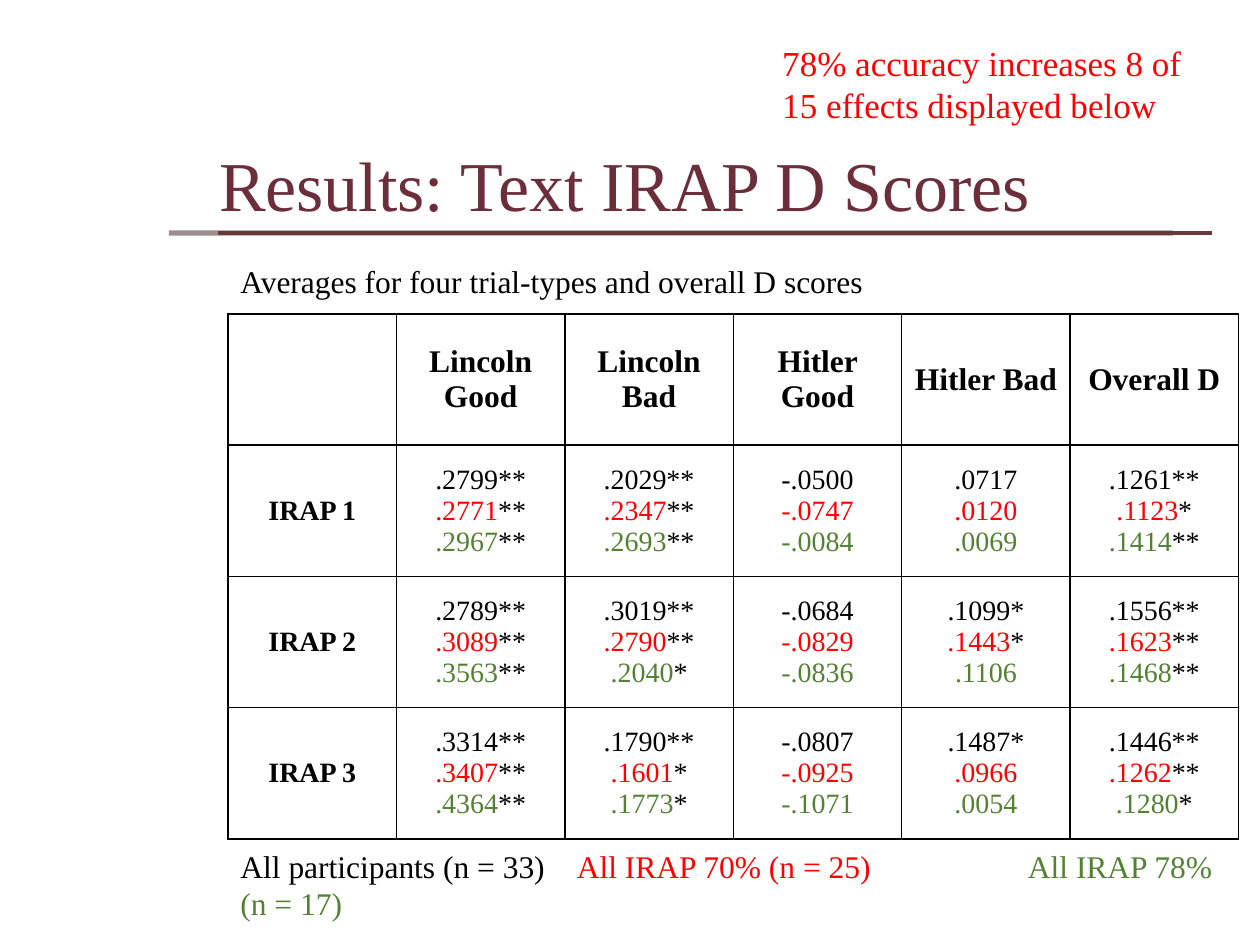
from dataclasses import dataclass

from lxml.etree import SubElement
from pptx import Presentation
from pptx.dml.color import RGBColor
from pptx.enum.shapes import MSO_CONNECTOR
from pptx.enum.text import MSO_ANCHOR, PP_ALIGN
from pptx.oxml.ns import qn
from pptx.util import Inches, Pt

FONT = "Times New Roman"
BLACK, RED, GREEN = "000000", "FF0000", "548235"
TITLE, RULE, RULE_SHADE = "6B2E3A", "683A3C", "3C1C21"
# The slide is a grid of 100 columns by 100 rows
COLUMN, ROW = Inches(10) / 100, Inches(7.5) / 100

HEADINGS = ["Lincoln Good", "Lincoln Bad", "Hitler Good", "Hitler Bad", "Overall D"]
# Each score lists all participants, the 70% group and the 78% group
SCORES = {
    "IRAP 1": [".2799** .2771** .2967**", ".2029** .2347** .2693**", "-.0500 -.0747 -.0084",
               ".0717 .0120 .0069", ".1261** .1123* .1414**"],
    "IRAP 2": [".2789** .3089** .3563**", ".3019** .2790** .2040*", "-.0684 -.0829 -.0836",
               ".1099* .1443* .1106", ".1556** .1623** .1468**"],
    "IRAP 3": [".3314** .3407** .4364**", ".1790** .1601* .1773*", "-.0807 -.0925 -.1071",
               ".1487* .0966 .0054", ".1446** .1262** .1280*"],
}


@dataclass
class Box:
    left: float
    top: float
    width: float
    height: float

    def inner(self, left, top, width, height):
        return Box(self.left + left, self.top + top, width, height)

    def lengths(self):
        return (round(self.left * COLUMN), round(self.top * ROW),
                round(self.width * COLUMN), round(self.height * ROW))


def color(value):
    return RGBColor.from_string(value)


def add_run(paragraph, text, size, shade=BLACK, bold=False):
    run = paragraph.add_run()
    run.text = text
    run.font.name, run.font.size, run.font.bold = FONT, Pt(size), bold
    run.font.color.rgb = color(shade)


def add_text(slide, box, runs, size, anchor=MSO_ANCHOR.TOP):
    frame = slide.shapes.add_textbox(*box.lengths()).text_frame
    frame.word_wrap = True
    frame.vertical_anchor = anchor
    paragraph = frame.paragraphs[0]
    for text, shade in runs:
        add_run(paragraph, text, size, shade)
    return paragraph


def add_rule(slide, box, shade, width, opacity=100):
    left, top, length, _ = box.lengths()
    rule = slide.shapes.add_connector(MSO_CONNECTOR.STRAIGHT, left, top, left + length, top)
    rule.line.width = Pt(width)
    rule.line.color.rgb = color(shade)
    properties = rule._element.spPr
    if opacity < 100:
        line_color = properties.find(f".//{qn('a:srgbClr')}")
        SubElement(line_color, qn("a:alpha"), val=str(opacity * 1000))
    SubElement(properties, qn("a:effectLst"))


def draw_header(slide, box):
    # Double rule under the title
    add_rule(slide, box.inner(0, box.height, 79.7, 0), RULE_SHADE, 3, opacity=50)
    add_rule(slide, box.inner(3.9, box.height, 78.9, 0), RULE, 2.5)
    # Title and remark
    title = add_text(slide, box.inner(3, 1.6, 76.7, box.height - 1.6),
                     [("Results: Text IRAP D Scores", TITLE)], 40, MSO_ANCHOR.BOTTOM)
    title.line_spacing = 0.9
    add_text(slide, box.inner(47.7, 0, 37.1, 10.27),
             [("78% accuracy increases 8 of 15 effects displayed below", RED)], 20)


def style_cell(cell):
    cell.vertical_anchor = MSO_ANCHOR.MIDDLE
    properties = cell._tc.get_or_add_tcPr()
    for side in ("lnL", "lnR", "lnT", "lnB"):
        border = SubElement(properties, qn(f"a:{side}"), w=str(Pt(1)))
        fill = SubElement(border, qn("a:solidFill"))
        SubElement(fill, qn("a:srgbClr"), val=BLACK)
    cell.fill.background()


def fill_scores(cell, scores):
    for index, (score, shade) in enumerate(zip(scores.split(), (BLACK, RED, GREEN))):
        frame = cell.text_frame
        paragraph = frame.add_paragraph() if index else frame.paragraphs[0]
        paragraph.alignment = PP_ALIGN.CENTER
        number = score.rstrip("*")
        add_run(paragraph, number, 16, shade)
        if number != score:
            add_run(paragraph, score[len(number):], 16)


def fill_heading(cell, text, size):
    paragraph = cell.text_frame.paragraphs[0]
    paragraph.alignment = PP_ALIGN.CENTER
    add_run(paragraph, text, size, bold=True)


def draw_table(slide, box):
    rows, columns = len(SCORES) + 1, len(HEADINGS) + 1
    table = slide.shapes.add_table(rows, columns, *box.lengths()).table
    table.first_row = table.horz_banding = False
    for cell in table.iter_cells():
        style_cell(cell)
    for column, heading in enumerate(HEADINGS, 1):
        fill_heading(table.cell(0, column), heading, 18)
    for row, (label, scores) in enumerate(SCORES.items(), 1):
        fill_heading(table.cell(row, 0), label, 16)
        for column, values in enumerate(scores, 1):
            fill_scores(table.cell(row, column), values)


def draw_legend(slide, box):
    legend = add_text(slide, box, [("All participants (n = 33)\t", BLACK),
                                   ("All IRAP 70% (n = 25)\t", RED),
                                   ("All IRAP 78% (n = 17)", GREEN)], 18)
    tabs = SubElement(legend._p.get_or_add_pPr(), qn("a:tabLst"))
    for stop in (26.7, 62.5):
        SubElement(tabs, qn("a:tab"), pos=str(round(stop * COLUMN)), algn="l")


def draw_results(slide, box):
    caption = "Averages for four trial-types and overall D scores"
    add_text(slide, box.inner(0, 0, 77.9, 5.33), [(caption, BLACK)], 18)
    draw_table(slide, box.inner(0, 6.13, box.width, 55.6))
    draw_legend(slide, box.inner(0, 61.87, box.width, 5.33))


def main():
    presentation = Presentation()
    presentation.slide_width, presentation.slide_height = Inches(10), Inches(7.5)
    slide = presentation.slides.add_slide(presentation.slide_layouts[6])
    draw_header(slide, Box(13.4, 3.73, 84.8, 20.93))
    draw_results(slide, Box(18.1, 27.07, 80.2, 67.2))
    presentation.save("out.pptx")


if __name__ == "__main__":
    main()
